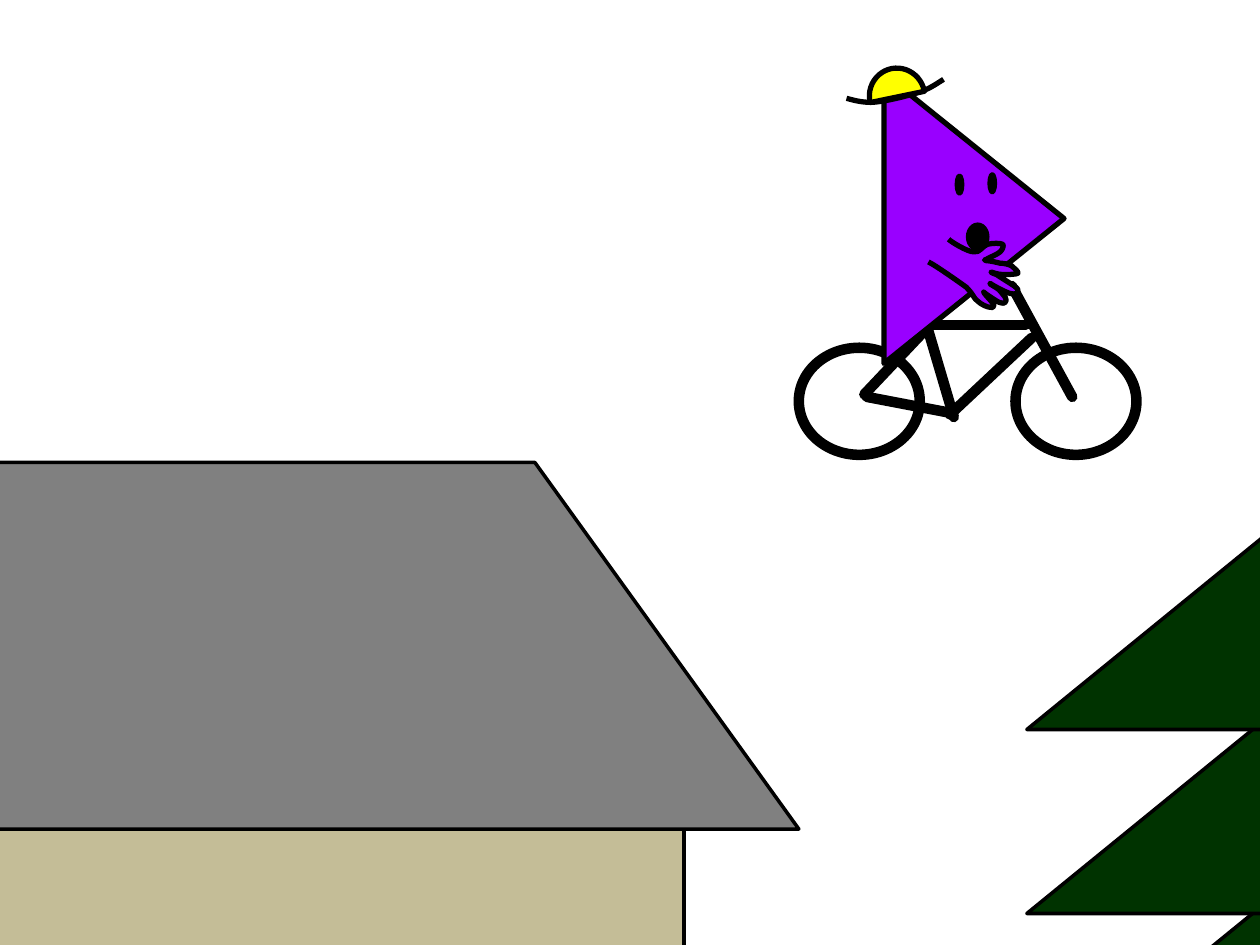
from dataclasses import dataclass
from math import cos, radians, sin

from lxml import etree
from pptx import Presentation
from pptx.dml.color import RGBColor
from pptx.enum.shapes import MSO_CONNECTOR, MSO_SHAPE
from pptx.oxml.ns import qn
from pptx.util import Inches, Pt

RECTANGLE = MSO_SHAPE.RECTANGLE
TRAPEZOID = MSO_SHAPE.TRAPEZOID
OVAL = MSO_SHAPE.OVAL
TRIANGLE = MSO_SHAPE.ISOSCELES_TRIANGLE
CHORD = MSO_SHAPE.CHORD
STRAIGHT = MSO_CONNECTOR.STRAIGHT


@dataclass(frozen=True)
class Theme:
    """Colours and line widths of the scene."""
    outline: str = "000000"
    wall: str = "C4BD97"
    roof: str = "808080"
    rider: str = "9900FF"
    hat: str = "FFFF00"
    tree: str = "003300"
    thin: int = 2
    medium: int = 3
    thick: int = 6


THEME = Theme()

FRAME_TUBES = [
    ((6.88, 3.15), (7.56, 3.28), THEME.thick),
    ((8.51, 3.15), (8.03, 2.27), THEME.thick),
    ((7.54, 3.29), (8.19, 2.68), THEME.thick),
    ((6.86, 3.13), (7.38, 2.58), THEME.thick),
    ((7.38, 2.58), (8.14, 2.58), THEME.thick),
    ((7.1, 2.41), (7.52, 2.45), THEME.medium),
    ((7.57, 3.31), (7.31, 2.43), THEME.thick),
]

BRIM = [
    (7.49, 0.63), (7.44, 0.66), (7.39, 0.7), (7.3, 0.73),
    (7.21, 0.76), (7.05, 0.8), (6.95, 0.81),
    (6.85, 0.82), (6.76, 0.79), (6.72, 0.78),
]

HAND = [
    (7.53, 1.91), (7.55, 1.93), (7.68, 2.01), (7.73, 2.01),
    (7.78, 2.02), (7.8, 1.96), (7.84, 1.95),
    (7.88, 1.94), (7.94, 1.94), (7.96, 1.95),
    (7.97, 1.96), (7.96, 1.99), (7.94, 2.01),
    (7.92, 2.03), (7.84, 2.06), (7.83, 2.07),
    (7.81, 2.08), (7.81, 2.07), (7.83, 2.08),
    (7.85, 2.08), (7.9, 2.09), (7.94, 2.1),
    (7.97, 2.1), (8.01, 2.11), (8.03, 2.12),
    (8.05, 2.14), (8.09, 2.17), (8.08, 2.18),
    (8.07, 2.19), (7.99, 2.19), (7.96, 2.19),
    (7.92, 2.19), (7.87, 2.17), (7.87, 2.17),
    (7.86, 2.17), (7.88, 2.18), (7.91, 2.19),
    (7.94, 2.21), (8.02, 2.26), (8.05, 2.28),
    (8.08, 2.3), (8.09, 2.32), (8.08, 2.33),
    (8.08, 2.34), (8.06, 2.35), (8.02, 2.34),
    (7.98, 2.33), (7.87, 2.27), (7.86, 2.26),
    (7.84, 2.26), (7.91, 2.29), (7.93, 2.31),
    (7.95, 2.33), (7.97, 2.36), (7.98, 2.37),
    (7.99, 2.39), (7.99, 2.4), (7.98, 2.41),
    (7.98, 2.42), (7.96, 2.42), (7.93, 2.41),
    (7.91, 2.4), (7.88, 2.38), (7.85, 2.36),
    (7.83, 2.35), (7.8, 2.32), (7.81, 2.33),
    (7.81, 2.34), (7.88, 2.41), (7.89, 2.43),
    (7.89, 2.45), (7.88, 2.46), (7.86, 2.45),
    (7.84, 2.45), (7.79, 2.43), (7.76, 2.4),
    (7.73, 2.38), (7.73, 2.35), (7.67, 2.29),
    (7.6, 2.24), (7.43, 2.12), (7.37, 2.09),
]


def style_line(line, weight):
    """Give an outline the theme colour and a weight in points."""
    line.color.rgb = RGBColor.from_string(THEME.outline)
    line.width = Pt(weight)


def style_shape(shape, fill, weight):
    """Set fill and outline, and drop the shadow."""
    shape.shadow.inherit = False
    if fill:
        shape.fill.solid()
        shape.fill.fore_color.rgb = RGBColor.from_string(fill)
    else:
        shape.fill.background()
    style_line(shape.line, weight)


def add_form(shapes, preset, box, fill, weight, rotation=0, flip=None, adjust=()):
    """Add a preset shape at a box given in inches."""
    form = shapes.add_shape(preset, *map(Inches, box))
    style_shape(form, fill, weight)
    form.rotation = rotation
    for index, value in enumerate(adjust):
        form.adjustments[index] = value
    if flip:
        form.element.spPr.find(qn("a:xfrm")).set(flip, "1")
    return form


def add_tube(shapes, start, end, weight):
    """Add a round-ended straight line."""
    tube = shapes.add_connector(STRAIGHT, *map(Inches, start + end))
    style_line(tube.line, weight)
    properties = tube.element.spPr
    properties.find(qn("a:ln")).set("cap", "rnd")
    etree.SubElement(properties, qn("a:effectLst"))


def turn_back(point, pivot, rotation):
    """Rotate a point about the pivot against the given rotation."""
    angle = radians(-rotation)
    dx, dy = point[0] - pivot[0], point[1] - pivot[1]
    return (Inches(pivot[0] + dx * cos(angle) - dy * sin(angle)),
            Inches(pivot[1] + dx * sin(angle) + dy * cos(angle)))


def add_curve(shapes, points, pivot, rotation, fill, weight):
    """Add an open chain of cubic curves, rotated about its pivot."""
    start, *rest = [turn_back(point, pivot, rotation) for point in points]
    builder = shapes.build_freeform(*start)
    builder.add_line_segments(rest, close=False)
    curve = builder.convert_to_shape()
    outline = next(curve.element.iter(qn("a:path")))
    segments = outline.findall(qn("a:lnTo"))
    for first in range(0, len(segments), 3):
        bezier = etree.SubElement(outline, qn("a:cubicBezTo"))
        for segment in segments[first:first + 3]:
            bezier.append(segment[0])
            outline.remove(segment)
    style_shape(curve, fill, weight)
    curve.rotation = rotation


def add_house(slide):
    """Draw the wall and the roof."""
    house = slide.shapes.add_group_shape().shapes
    add_form(house, RECTANGLE, (-7.26, 6.58, 12.69, 2.06), THEME.wall, THEME.thin)
    add_form(house, TRAPEZOID, (-9.65, 3.67, 15.99, 2.91), THEME.roof, THEME.thin,
             adjust=(0.72,))


def add_cyclist(slide):
    """Draw the bicycle and its triangular rider."""
    cyclist = slide.shapes.add_group_shape().shapes
    for wheel_left in (8.06, 6.34):
        add_form(cyclist, OVAL, (wheel_left, 2.76, 0.96, 0.85), None, THEME.thick)
    for start, end, weight in FRAME_TUBES:
        add_tube(cyclist, start, end, weight)
    add_form(cyclist, TRIANGLE, (6.58, 1.02, 2.3, 1.43), THEME.rider, THEME.medium,
             rotation=270, flip="flipV")
    add_curve(cyclist, BRIM, (7.11, 0.74), 348.9, None, THEME.medium)
    add_form(cyclist, CHORD, (6.9, 0.54, 0.44, 0.45), THEME.hat, THEME.medium,
             rotation=348.9, flip="flipH", adjust=(107.65, 1.09))
    for eye_left, eye_top in ((7.85, 1.38), (7.59, 1.39)):
        add_form(cyclist, OVAL, (eye_left, eye_top, 0.05, 0.15), THEME.outline, THEME.thin)
    add_curve(cyclist, HAND, (7.77, 2.13), 295.1, THEME.rider, THEME.medium)
    add_form(slide.shapes, OVAL, (7.68, 1.78, 0.16, 0.2), THEME.outline, THEME.thin)


def add_tree(slide):
    """Stack the tiers of the fir tree from the bottom up."""
    tree = slide.shapes.add_group_shape().shapes
    for tier in (2, 1, 0):
        add_form(tree, TRIANGLE, (8.15, 3.48 + 1.46 * tier, 5.67, 2.31),
                 THEME.tree, THEME.thin)


def main():
    """Build the slide and save it."""
    deck = Presentation()
    deck.slide_width, deck.slide_height = Inches(10), Inches(7.5)
    slide = deck.slides.add_slide(deck.slide_layouts[6])
    add_house(slide)
    add_cyclist(slide)
    add_tree(slide)
    deck.save("out.pptx")


if __name__ == "__main__":
    main()
